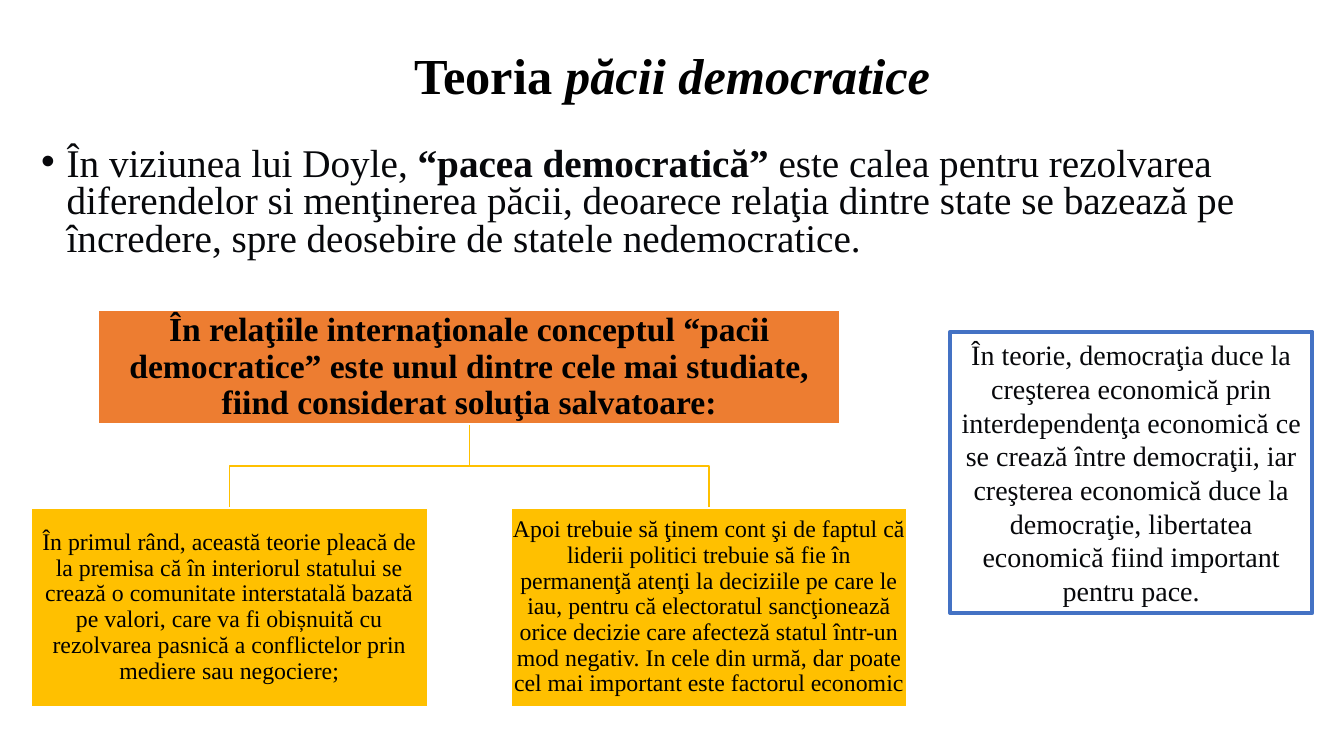
from dataclasses import dataclass
from lxml.etree import SubElement as Sub
from pptx import Presentation
from pptx.dml.color import RGBColor as Rgb
from pptx.enum.shapes import MSO_SHAPE as Form
from pptx.enum.text import MSO_ANCHOR as Anchor, PP_ALIGN as Align
from pptx.oxml.ns import qn
from pptx.util import Cm, Pt


@dataclass(frozen=True)
class Theme:
    font: str = "Times New Roman"
    black: str = "000000"
    ink: str = "07080B"
    white: str = "FFFFFF"
    root: str = "ED7D31"
    leaf: str = "FFC000"
    edge: str = "4472C4"
    title: int = 36
    body: int = 28
    head: int = 24
    note: int = 20
    small: int = 17


LOOK = Theme()

TITLE = [("Teoria ", True, False), ("păcii democratice", True, True)]
BODY = [
    ("În viziunea lui Doyle, ", False, False),
    ("“pacea democratică” ", True, False),
    ("este calea pentru rezolvarea diferendelor si menţinerea păcii, "
     "deoarece relaţia dintre state se bazează pe încredere, spre "
     "deosebire de statele nedemocratice.", False, False),
]
ROOT = [
    ("În relaţiile internaţionale conceptul “pacii democratice” este unul "
     "dintre cele mai studiate, fiind considerat soluţia salvatoare:",
     True, False),
]
LEAVES = [
    "În primul rând, această teorie pleacă de la premisa că în interiorul "
    "statului se crează o comunitate interstatală bazată pe valori, care va "
    "fi obișnuită cu rezolvarea pasnică a conflictelor prin mediere sau "
    "negociere;",
    "Apoi trebuie să ţinem cont şi de faptul că liderii politici trebuie să "
    "fie în permanenţă atenţi la deciziile pe care le iau, pentru că "
    "electoratul sancţionează orice decizie care afecteză statul într-un mod "
    "negativ. In cele din urmă, dar poate cel mai important este factorul "
    "economic",
]
NOTE = (
    "În teorie, democraţia duce la creşterea economică prin interdependenţa "
    "economică ce se crează între democraţii, iar creşterea economică duce "
    "la democraţie, libertatea economică fiind important pentru pace."
)


def write(shape, runs, size, color, align=Align.CENTER, space=0.9, pad=None):
    frame = shape.text_frame
    frame.word_wrap = True
    frame.vertical_anchor = Anchor.MIDDLE
    if pad is not None:
        frame.margin_left = frame.margin_right = pad
        frame.margin_top = frame.margin_bottom = pad
    para = frame.paragraphs[0]
    para.alignment = align
    para.line_spacing = space
    for text, bold, slant in runs:
        run = para.add_run()
        run.text = text
        font = run.font
        font.name = LOOK.font
        font.size = Pt(size)
        font.bold = bold
        font.italic = slant
        font.color.rgb = Rgb.from_string(color)
    return para


def block(slide, box, fill, line, width):
    shape = slide.shapes.add_shape(Form.RECTANGLE, *box)
    shape.shadow.inherit = False
    shape.fill.solid()
    shape.fill.fore_color.rgb = Rgb.from_string(fill)
    shape.line.color.rgb = Rgb.from_string(line)
    shape.line.width = Pt(width)
    return shape


def title(slide, box):
    write(slide.shapes.add_textbox(*box), TITLE, LOOK.title, LOOK.black)


def body(slide, box):
    shape = slide.shapes.add_textbox(*box)
    para = write(shape, BODY, LOOK.body, LOOK.ink, Align.LEFT, 0.8)
    shape.text_frame.vertical_anchor = Anchor.TOP
    para.space_before = Pt(10)
    props = para._p.get_or_add_pPr()
    props.set("marL", str(Cm(0.64)))
    props.set("indent", str(Cm(-0.64)))
    Sub(props, qn("a:buFont")).set("typeface", "Arial")
    Sub(props, qn("a:buChar")).set("char", "•")


def branch(slide, start, end):
    mid = (start[1] + end[1]) // 2
    pen = slide.shapes.build_freeform(*start)
    pen.add_line_segments([(start[0], mid), (end[0], mid), end], close=False)
    shape = pen.convert_to_shape()
    shape.shadow.inherit = False
    shape.fill.background()
    shape.line.color.rgb = Rgb.from_string(LOOK.leaf)
    shape.line.width = Pt(1)


def tree(slide, box):
    left, top, width, height = box
    wide, high = Cm(18.67), Cm(2.87)
    side, tall = Cm(9.98), Cm(5)
    mid = left + width // 2
    low = top + height - tall
    step = (width - side) // (len(LEAVES) - 1)
    spots = [left + i * step for i in range(len(LEAVES))]
    for x in spots:
        branch(slide, (mid, top + high), (x + side // 2, low))
    root = block(slide, (mid - wide // 2, top, wide, high),
                 LOOK.root, LOOK.white, 1)
    write(root, ROOT, LOOK.head, LOOK.black, pad=Cm(0.04))
    for x, text in zip(spots, LEAVES):
        leaf = block(slide, (x, low, side, tall), LOOK.leaf, LOOK.white, 1)
        write(leaf, [(text, False, False)], LOOK.small, LOOK.black,
              pad=Cm(0.03))


def note(slide, box):
    shape = block(slide, box, LOOK.white, LOOK.edge, 3)
    write(shape, [(NOTE, False, False)], LOOK.note, LOOK.ink, space=1.0)


def main():
    deck = Presentation()
    deck.slide_width, deck.slide_height = Cm(33.87), Cm(19.05)
    slide = deck.slides.add_slide(deck.slide_layouts[6])
    title(slide, (Cm(2.34), Cm(1.02), Cm(29.21), Cm(1.88)))
    body(slide, (Cm(0.79), Cm(3.58), Cm(32.31), Cm(3.45)))
    tree(slide, (Cm(0.79), Cm(7.82), Cm(22.07), Cm(9.98)))
    note(slide, (Cm(23.95), Cm(8.36), Cm(9.12), Cm(7.09)))
    deck.save("out.pptx")


if __name__ == "__main__":
    main()
